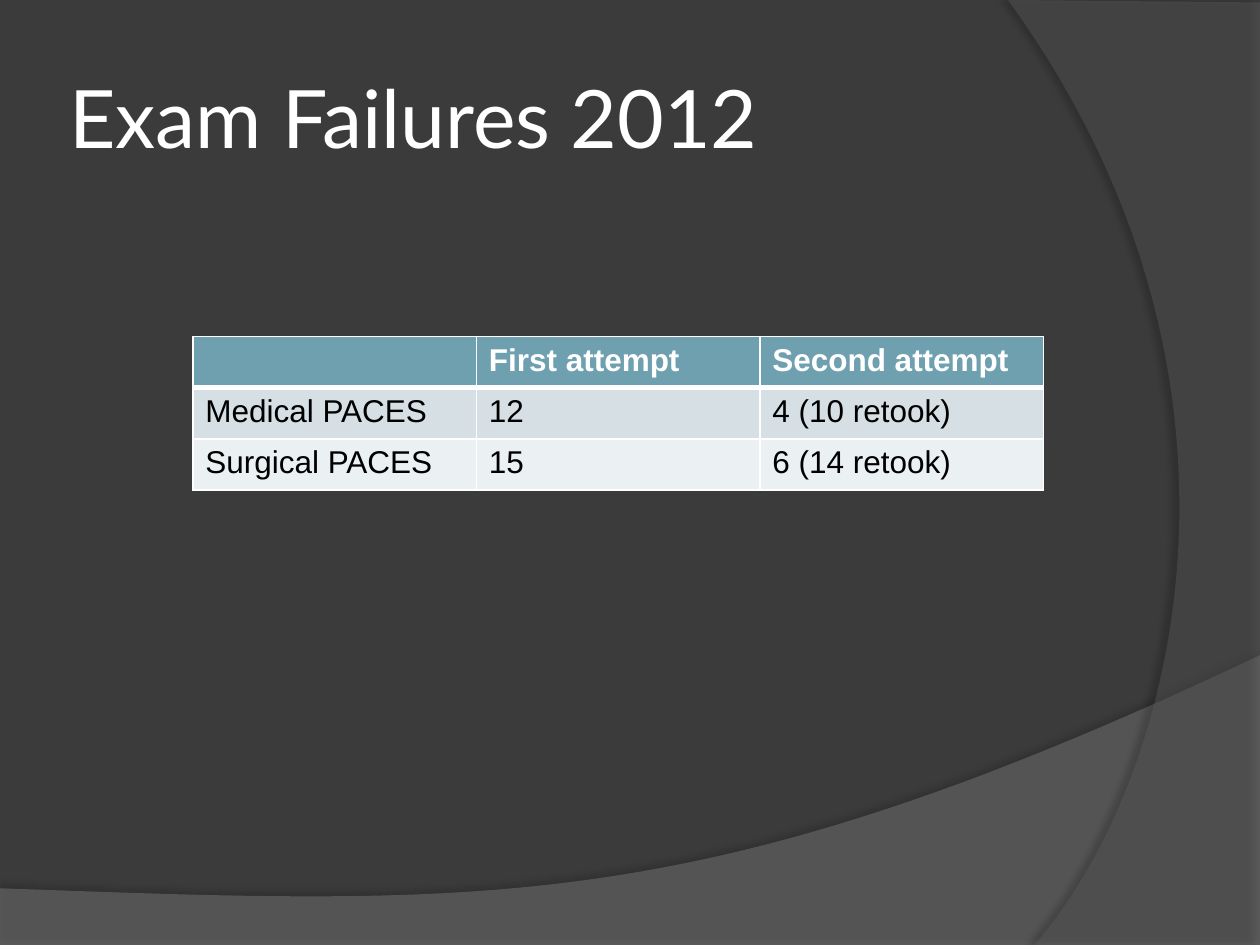
from dataclasses import dataclass

from lxml.etree import SubElement
from pptx import Presentation
from pptx.dml.color import RGBColor
from pptx.enum.text import MSO_ANCHOR
from pptx.oxml import parse_xml
from pptx.oxml.ns import nsdecls, qn
from pptx.util import Inches, Pt


@dataclass(frozen=True)
class Theme:
    background: str = "3B3B3B"
    lower_wave: str = "7F7F7F"
    right_wave: str = "5E5E5E"
    shadow: str = "000000"
    light: str = "FFFFFF"
    dark: str = "000000"
    header: str = "6EA0B0"
    bands: tuple = ("D5DFE4", "EBF0F2")
    title_font: str = "Lato"
    table_font: str = "Arial"
    title_size: int = 46
    table_size: int = 18
    rule: int = 1
    header_rule: int = 3


THEME = Theme()
CURVE_STEPS = 60
ROWS = [
    ("", "First attempt", "Second attempt"),
    ("Medical PACES", "12", "4 (10 retook)"),
    ("Surgical PACES", "15", "6 (14 retook)"),
]


def rgb(color):
    return RGBColor.from_string(color)


def style_text(paragraph, font_name, size, color, bold=False):
    font = paragraph.font
    font.name, font.size, font.bold = font_name, Pt(size), bold
    font.color.rgb = rgb(color)


def curve(start, control_1, control_2, end):
    """Points along a cubic Bezier curve."""
    points = []
    for step in range(CURVE_STEPS + 1):
        t = step / CURVE_STEPS
        weights = ((1 - t) ** 3, 3 * t * (1 - t) ** 2, 3 * t * t * (1 - t), t ** 3)
        knots = (start, control_1, control_2, end)
        points.append(tuple(sum(w * knot[axis] for w, knot in zip(weights, knots))
                            for axis in (0, 1)))
    return points


def add_wave(slide, left, top, outline, color, opacity, shadow):
    """Translucent background wave; the outline is relative to left and top."""
    points = [(left + Inches(x), top + Inches(y)) for x, y in outline]
    builder = slide.shapes.build_freeform(*points[0])
    builder.add_line_segments(points[1:], close=True)
    wave = builder.convert_to_shape()
    wave.fill.solid()
    wave.fill.fore_color.rgb = rgb(color)
    wave.line.fill.background()
    wave.shadow.inherit = False

    properties = wave.element.spPr
    fill_color = properties.find(qn("a:solidFill")).find(qn("a:srgbClr"))
    SubElement(fill_color, qn("a:alpha"), val=str(opacity * 1000))
    shadow_opacity, blur, distance, angle = shadow
    properties.find(qn("a:effectLst")).append(parse_xml(
        f'<a:outerShdw {nsdecls("a")} blurRad="{Pt(blur)}" dist="{Pt(distance)}" '
        f'dir="{angle * 60000}" algn="ctr" rotWithShape="0">'
        f'<a:srgbClr val="{THEME.shadow}"><a:alpha val="{shadow_opacity * 1000}"/>'
        '</a:srgbClr></a:outerShdw>'))


def add_background(slide, width, height):
    slide.background.fill.solid()
    slide.background.fill.fore_color.rgb = rgb(THEME.background)

    # Wave along the bottom
    lower = [(0, 2.31), (10, 2.31)]
    lower += curve((10, 0), (5.59, 2.09), (3.91, 1.99), (0, 1.85))
    add_wave(slide, 0, height - Inches(2.3), lower,
             THEME.lower_wave, 45, (35, 4, 3.5, 270))

    # Wave down the right side
    right = [(2, 0.02), (2, 7.5)]
    right += curve((0.21, 7.5), (1.35, 6.19), (2.18, 3), (0, 0))
    add_wave(slide, width - Inches(2), 0, right,
             THEME.right_wave, 40, (45, 4, 4, 180))


def add_title(slide, left, top, width, height):
    frame = slide.shapes.add_textbox(left, top, width, height).text_frame
    frame.word_wrap = True
    frame.vertical_anchor = MSO_ANCHOR.MIDDLE
    frame.margin_left = frame.margin_right = Inches(0.05)
    frame.margin_top = frame.margin_bottom = Inches(0.05)
    frame.text = "Exam Failures 2012"
    style_text(frame.paragraphs[0], THEME.title_font, THEME.title_size, THEME.light)


def set_borders(cell, top, bottom):
    """Border lines come before the fill in the cell properties."""
    widths = {"L": THEME.rule, "R": THEME.rule, "T": top, "B": bottom}
    properties = cell._tc.get_or_add_tcPr()
    for position, (side, width) in enumerate(widths.items()):
        properties.insert(position, parse_xml(
            f'<a:ln{side} {nsdecls("a")} w="{Pt(width)}"><a:solidFill>'
            f'<a:srgbClr val="{THEME.light}"/></a:solidFill></a:ln{side}>'))


def add_failures_table(slide, left, top, width, height):
    table = slide.shapes.add_table(len(ROWS), len(ROWS[0]),
                                   left, top, width, height).table
    for row, values in enumerate(ROWS):
        is_header = row == 0
        fill = THEME.header if is_header else THEME.bands[(row - 1) % 2]
        text_color = THEME.light if is_header else THEME.dark
        for column, value in enumerate(values):
            cell = table.cell(row, column)
            cell.text = value
            style_text(cell.text_frame.paragraphs[0], THEME.table_font,
                       THEME.table_size, text_color, is_header)
            cell.fill.solid()
            cell.fill.fore_color.rgb = rgb(fill)
            set_borders(cell,
                        top=THEME.header_rule if row == 1 else THEME.rule,
                        bottom=THEME.header_rule if is_header else THEME.rule)


def main():
    presentation = Presentation()
    presentation.slide_width, presentation.slide_height = Inches(10), Inches(7.5)
    slide = presentation.slides.add_slide(presentation.slide_layouts[6])
    add_background(slide, presentation.slide_width, presentation.slide_height)
    add_title(slide, Inches(0.5), Inches(0.3), Inches(8.17), Inches(1.25))
    add_failures_table(slide, Inches(1.53), Inches(2.67), Inches(6.75), Inches(1.22))
    presentation.save("out.pptx")


if __name__ == "__main__":
    main()
